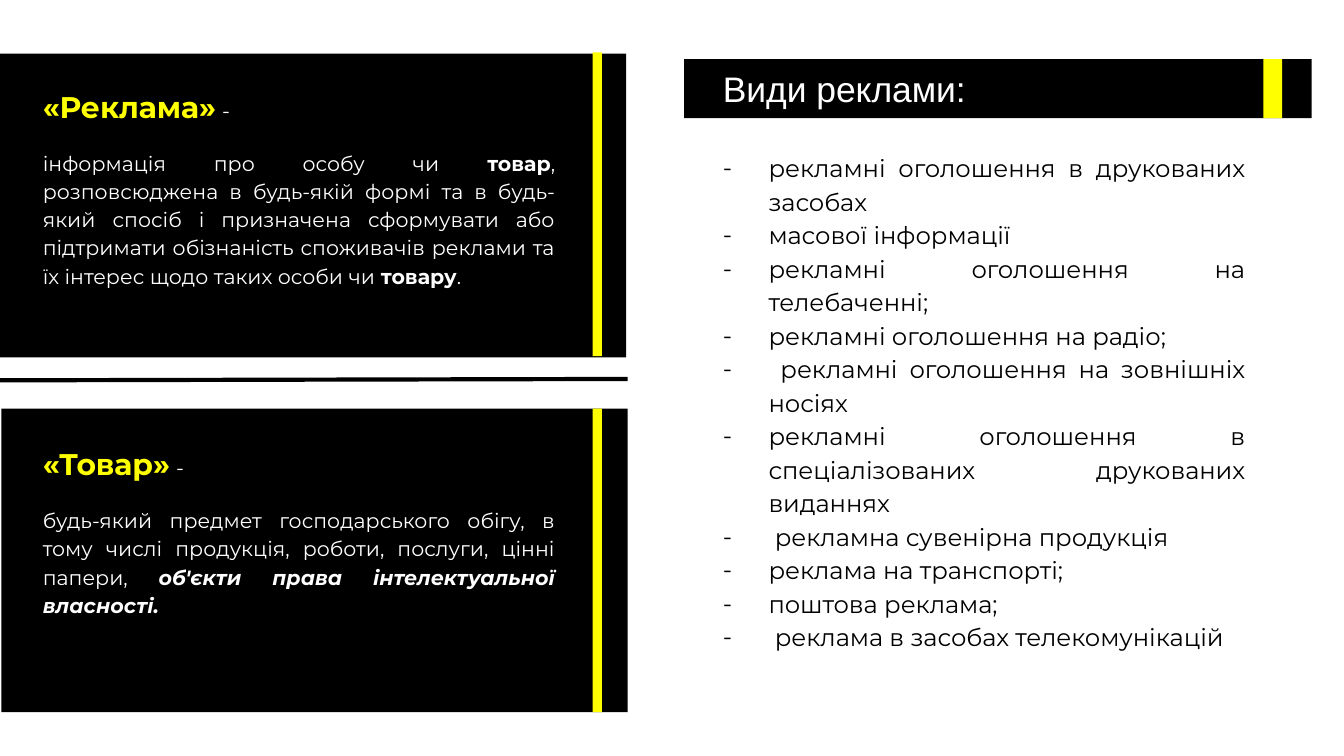
from lxml import etree
from pptx import Presentation
from pptx.dml.color import RGBColor
from pptx.enum.shapes import MSO_CONNECTOR, MSO_SHAPE
from pptx.enum.text import PP_ALIGN
from pptx.oxml.ns import qn
from pptx.util import Inches, Pt

RECTANGLE = MSO_SHAPE.RECTANGLE
STRAIGHT = MSO_CONNECTOR.STRAIGHT
JUSTIFY = PP_ALIGN.JUSTIFY
LEFT = PP_ALIGN.LEFT

THEME = {
    "black": "000000", "white": "FFFFFF", "yellow": "FFFF00",
    "body_font": "Montserrat", "title_font": "Arial",
    "term_size": 16, "definition_size": 11, "title_size": 19, "list_size": 13,
}

# Each definition run is (text, format).
DEFINITIONS = [
    {"term": "«Реклама»", "panel": (0, 0.4), "stripe_top": 0.39, "text_top": 0.52,
     "runs": [
         ("інформація про особу чи ", {}),
         ("товар", {"bold": True}),
         (", розповсюджена в будь-якій формі та в будь-який спосіб і призначена "
          "сформувати або підтримати обізнаність споживачів реклами та їх інтерес "
          "щодо таких особи чи ", {}),
         ("товару", {"bold": True}),
         (".", {}),
     ]},
    {"term": "«Товар»", "panel": (0.01, 3.04), "stripe_top": 3.04, "text_top": 3.18,
     "runs": [
         ("будь-який предмет господарського обігу, в тому числі продукція, роботи, "
          "послуги, цінні папери, ", {}),
         ("об'єкти права інтелектуальної власності.", {"bold": True, "italic": True}),
     ]},
]
TITLE = "Види реклами:"
AD_TYPES = [
    "рекламні оголошення в друкованих засобах",
    "масової інформації ",
    "рекламні оголошення на телебаченні;",
    "рекламні оголошення на радіо;",
    " рекламні оголошення на зовнішніх носіях ",
    "рекламні оголошення в спеціалізованих друкованих виданнях ",
    " рекламна сувенірна продукція ",
    "реклама на транспорті;",
    "поштова реклама;",
    " реклама в засобах телекомунікацій ",
]
PANEL_WIDTH, PANEL_HEIGHT = 4.66, 2.26
STRIPE_LEFT, STRIPE_WIDTH = 4.41, 0.07
BAR_TOP, BAR_HEIGHT = 0.44, 0.44


def color(name):
    return RGBColor.from_string(THEME[name])


def add_block(slide, left, top, width, height, fill):
    shape = slide.shapes.add_shape(
        RECTANGLE, Inches(left), Inches(top), Inches(width), Inches(height))
    shape.shadow.inherit = False
    shape.fill.solid()
    shape.fill.fore_color.rgb = color(fill)
    shape.line.fill.background()


def add_dash_bullet(paragraph):
    properties = paragraph._p.get_or_add_pPr()
    properties.set("marL", str(Inches(0.5)))
    properties.set("indent", str(Inches(-0.34)))
    bullet_color = etree.SubElement(properties, qn("a:buClr"))
    etree.SubElement(bullet_color, qn("a:srgbClr"), val=THEME["black"])
    etree.SubElement(properties, qn("a:buFont"), typeface=THEME["body_font"])
    etree.SubElement(properties, qn("a:buChar"), char="-")


def add_text(slide, left, top, width, height, paragraphs, *, size, ink,
             font="body_font", align=JUSTIFY, line_spacing=1.15, before=0, bullets=False):
    """Add a text box; each paragraph is a list of (text, format overrides)."""
    box = slide.shapes.add_textbox(Inches(left), Inches(top), Inches(width), Inches(height))
    frame = box.text_frame
    frame.word_wrap = True
    frame.margin_left = frame.margin_right = Inches(0.1)
    frame.margin_top = frame.margin_bottom = Inches(0.1)
    for index, runs in enumerate(paragraphs):
        paragraph = frame.paragraphs[0] if index == 0 else frame.add_paragraph()
        paragraph.alignment = align
        paragraph.line_spacing = line_spacing
        paragraph.space_before = Pt(before)
        if bullets:
            add_dash_bullet(paragraph)
        for text, style in runs:
            run = paragraph.add_run()
            run.text = text
            run.font.name = THEME[font]
            run.font.size = Pt(THEME[style.get("size", size)])
            run.font.color.rgb = color(style.get("ink", ink))
            run.font.bold = style.get("bold", False)
            run.font.italic = style.get("italic", False)


def add_divider(slide):
    line = slide.shapes.add_connector(
        STRAIGHT, Inches(0), Inches(2.83), Inches(4.67), Inches(2.82))
    line.line.color.rgb = color("black")
    line.line.width = Pt(2.25)
    etree.SubElement(line._element.spPr, qn("a:effectLst"))


def main():
    presentation = Presentation()
    presentation.slide_width = Inches(10)
    presentation.slide_height = presentation.slide_width * 9 // 16
    slide = presentation.slides.add_slide(presentation.slide_layouts[6])

    for definition in DEFINITIONS:
        add_block(slide, *definition["panel"], PANEL_WIDTH, PANEL_HEIGHT, "black")
        heading = [
            (definition["term"], {"size": "term_size", "ink": "yellow", "bold": True}),
            (" ", {"ink": "yellow", "bold": True}),
            ("-", {}),
        ]
        add_text(slide, 0.22, definition["text_top"], 4.01, 1.68,
                 [heading, definition["runs"]],
                 size="definition_size", ink="white", before=12)
    add_divider(slide)

    add_block(slide, 5.09, BAR_TOP, 4.67, BAR_HEIGHT, "black")
    add_text(slide, 5.28, 0.4, 4.28, 0.3, [[(TITLE, {})]], size="title_size",
             ink="white", font="title_font", align=LEFT, line_spacing=1.0)
    add_text(slide, 5.12, 1.01, 4.24, 4.26, [[(item, {})] for item in AD_TYPES],
             size="list_size", ink="black", bullets=True)

    add_block(slide, 9.4, BAR_TOP, 0.14, BAR_HEIGHT, "yellow")
    for definition in DEFINITIONS:
        add_block(slide, STRIPE_LEFT, definition["stripe_top"],
                  STRIPE_WIDTH, PANEL_HEIGHT, "yellow")

    presentation.save("out.pptx")


if __name__ == "__main__":
    main()
